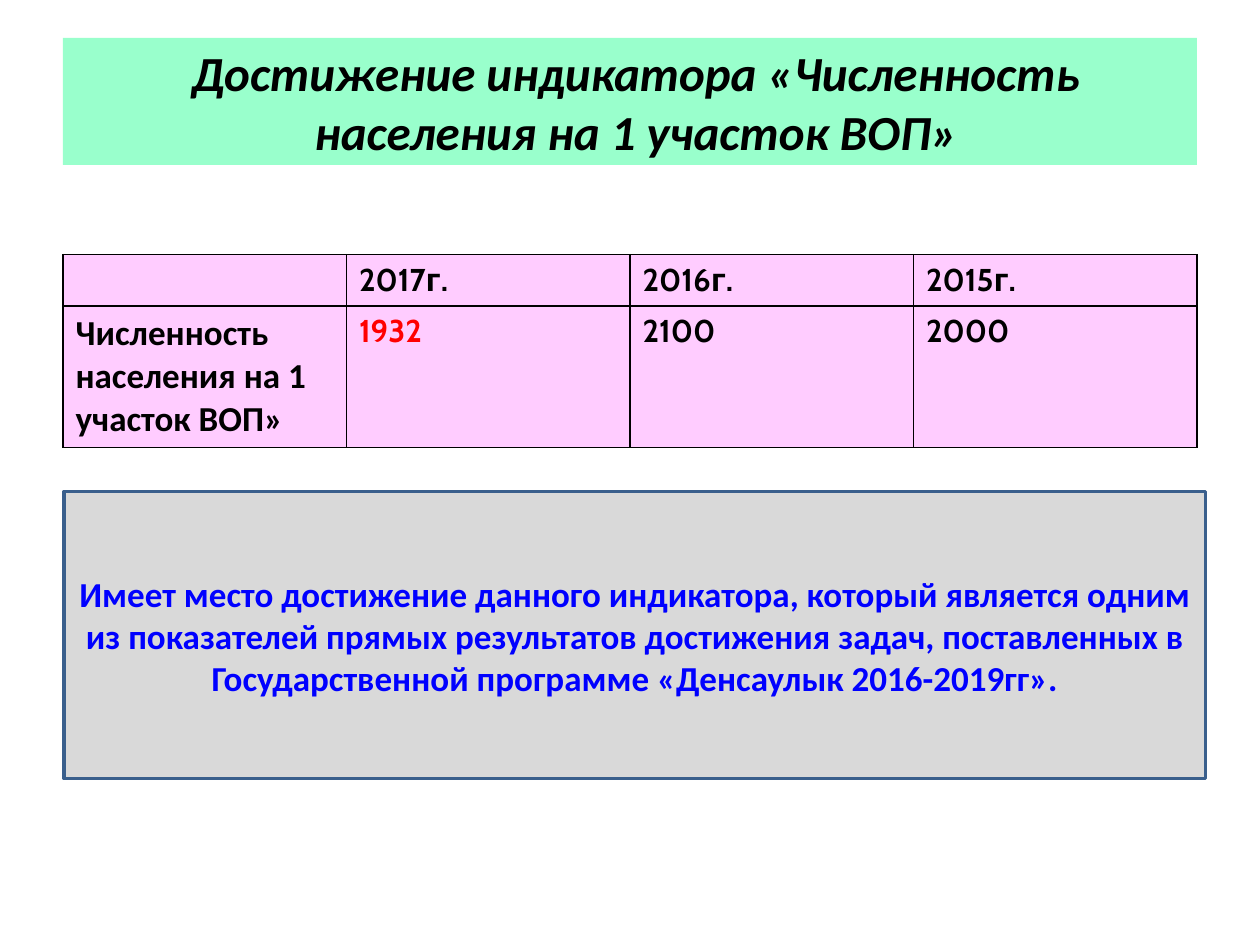
from lxml import etree
from pptx import Presentation
from pptx.dml.color import RGBColor
from pptx.enum.shapes import MSO_SHAPE
from pptx.enum.text import MSO_ANCHOR, PP_ALIGN
from pptx.oxml.ns import qn
from pptx.util import Inches, Pt

RECTANGLE = MSO_SHAPE.RECTANGLE
MIDDLE = MSO_ANCHOR.MIDDLE
CENTER = PP_ALIGN.CENTER

BLACK, RED, BLUE = "000000", "FF0000", "0000FF"
MINT, PINK, GREY, NAVY = "99FFCC", "FFCCFF", "D9D9D9", "3A5F8C"

TITLE = "Достижение индикатора «Численность населения на 1 участок ВОП»"
ROWS = [
    ["", "2017г.", "2016г.", "2015г."],
    ["Численность населения на 1 участок ВОП»", "1932", "2100", "2000"],
]
HIGHLIGHT = "1932"
CONCLUSION = (
    "Имеет место достижение данного индикатора, который является одним "
    "из показателей прямых результатов достижения задач, поставленных в "
    "Государственной программе «Денсаулык 2016-2019гг»."
)
TABLE_BOX = (0.5, 2.02, 9, 1.53)
ROW_HEIGHTS = [0.41, 1.12]


def color(value):
    """Turn a hex string into a colour."""
    return RGBColor.from_string(value)


def style_font(paragraph, name, size, value, italic=False):
    """Set a bold font on a whole paragraph."""
    font = paragraph.font
    font.name, font.size = name, Pt(size)
    font.bold, font.italic = True, italic
    font.color.rgb = color(value)


def add_panel(slide, box, text, fill, size, value, line=None, italic=False):
    """Add a filled rectangle with centred text."""
    shape = slide.shapes.add_shape(RECTANGLE, *map(Inches, box))
    shape.shadow.inherit = False
    shape.fill.solid()
    shape.fill.fore_color.rgb = color(fill)
    if line:
        shape.line.color.rgb = color(line)
        shape.line.width = Pt(2)
    else:
        shape.line.fill.background()
    frame = shape.text_frame
    frame.word_wrap = True
    frame.vertical_anchor = MIDDLE
    paragraph = frame.paragraphs[0]
    paragraph.text = text
    paragraph.alignment = CENTER
    style_font(paragraph, "Calibri", size, value, italic)
    return shape


def add_borders(cell, value, width):
    """Draw a line on all four sides of a cell."""
    properties = cell._tc.get_or_add_tcPr()
    for position, side in enumerate(("lnL", "lnR", "lnT", "lnB")):
        border = etree.Element(qn(f"a:{side}"), w=str(Pt(width)))
        fill = etree.SubElement(border, qn("a:solidFill"))
        etree.SubElement(fill, qn("a:srgbClr"), val=value)
        properties.insert(position, border)


def add_indicator_table(slide):
    """Add the table of population by year."""
    frame = slide.shapes.add_table(len(ROWS), len(ROWS[0]), *map(Inches, TABLE_BOX))
    table = frame.table
    for row_index, (texts, height) in enumerate(zip(ROWS, ROW_HEIGHTS)):
        table.rows[row_index].height = Inches(height)
        for column_index, text in enumerate(texts):
            cell = table.cell(row_index, column_index)
            cell.fill.solid()
            cell.fill.fore_color.rgb = color(PINK)
            add_borders(cell, BLACK, 1)
            if text:
                cell.text = text
                name, size = ("Cabin", 18) if column_index else ("Calibri", 20)
                value = RED if text == HIGHLIGHT else BLACK
                style_font(cell.text_frame.paragraphs[0], name, size, value)


def main():
    """Build the slide and save it."""
    presentation = Presentation()
    presentation.slide_width, presentation.slide_height = Inches(10), Inches(7.5)
    slide = presentation.slides.add_slide(presentation.slide_layouts[6])
    title = add_panel(slide, (0.5, 0.3, 9, 1.01), TITLE, MINT, 28, BLACK, italic=True)
    title.text_frame.margin_left = Inches(0.19)
    add_indicator_table(slide)
    add_panel(slide, (0.51, 3.9, 9.06, 2.28), CONCLUSION, GREY, 20, BLUE, line=NAVY)
    presentation.save("out.pptx")


if __name__ == "__main__":
    main()
